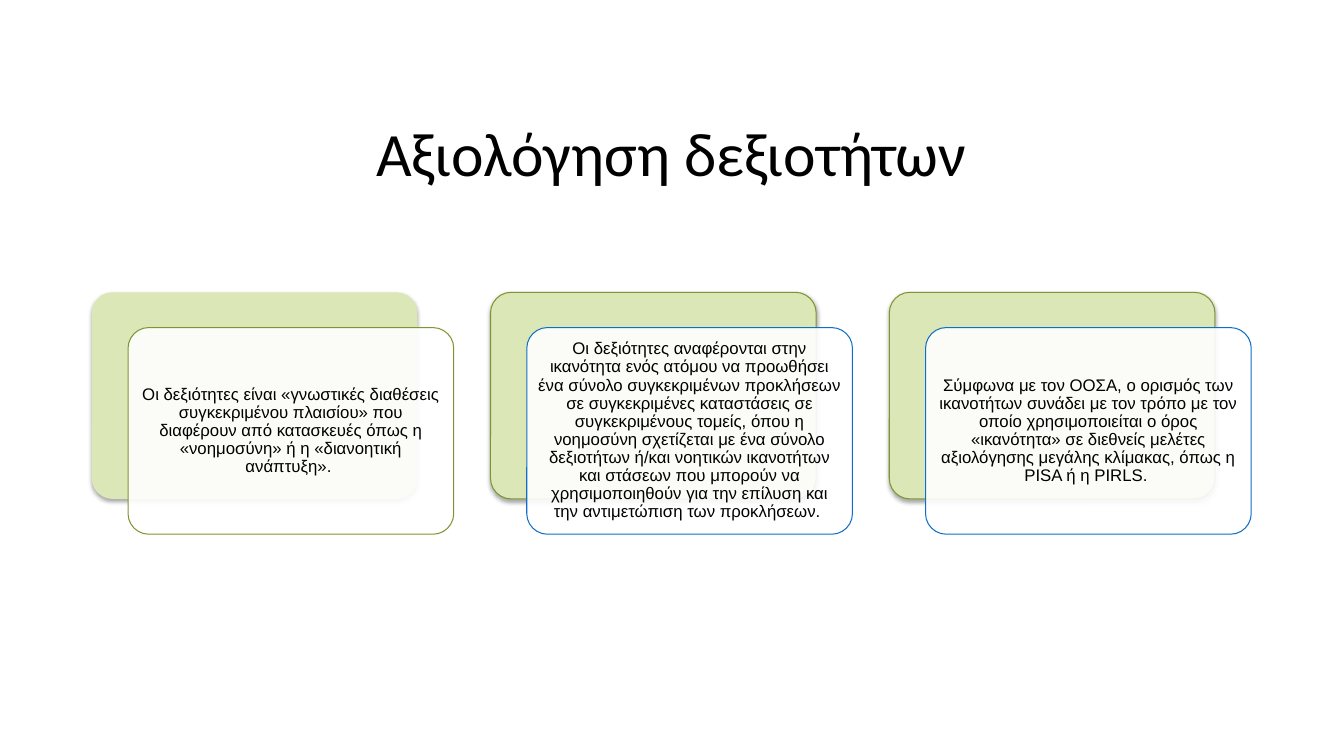
from dataclasses import dataclass

from lxml import etree
from pptx import Presentation
from pptx.dml.color import RGBColor
from pptx.enum.shapes import MSO_SHAPE
from pptx.enum.text import MSO_ANCHOR, PP_ALIGN
from pptx.oxml.ns import qn
from pptx.util import Inches, Pt

ROUND = MSO_SHAPE.ROUNDED_RECTANGLE
MIDDLE = MSO_ANCHOR.MIDDLE
CENTER = PP_ALIGN.CENTER

WIDE, HIGH = Inches(13.33), Inches(7.5)

# Shares of the slide, in percent of its width or height
LEFT, TOP = 6.83, 38.67
CARD_W, CARD_H = 24.23, 27.33
PITCH = 29.67
SHIFT_X, SHIFT_Y = 2.7, 4.67
TITLE_BOX = (LEFT, 12.13, 86.27, 17.2)


@dataclass(frozen=True)
class Theme:
    ink: str = "000000"
    paper: str = "FFFFFF"
    pale: str = "DBE7B6"
    green: str = "7E9632"
    blue: str = "0F6FC6"
    head_font: str = "Calibri"
    body_font: str = "Arial"
    head_size: int = 44
    body_size: int = 12
    line: float = 0.75
    curve: float = 0.1
    opaque: int = 90


THEME = Theme()

TITLE = "Αξιολόγηση δεξιοτήτων"

# Text, line of the back panel, line of the front card
CARDS = [
    ("Οι δεξιότητες είναι «γνωστικές διαθέσεις συγκεκριμένου πλαισίου» που "
     "διαφέρουν από κατασκευές όπως η «νοημοσύνη» ή η «διανοητική ανάπτυξη». ",
     None, THEME.green),
    ("Οι δεξιότητες αναφέρονται στην ικανότητα ενός ατόμου να προωθήσει ένα "
     "σύνολο συγκεκριμένων προκλήσεων σε συγκεκριμένες καταστάσεις σε "
     "συγκεκριμένους τομείς, όπου η νοημοσύνη σχετίζεται με ένα σύνολο "
     "δεξιοτήτων ή/και νοητικών ικανοτήτων και στάσεων που μπορούν να "
     "χρησιμοποιηθούν για την επίλυση και την αντιμετώπιση των προκλήσεων. ",
     THEME.green, THEME.blue),
    ("Σύμφωνα με τον ΟΟΣΑ, ο ορισμός των ικανοτήτων συνάδει με τον τρόπο με "
     "τον οποίο χρησιμοποιείται ο όρος «ικανότητα» σε διεθνείς μελέτες "
     "αξιολόγησης μεγάλης κλίμακας, όπως η PISA ή η PIRLS. ",
     THEME.green, THEME.blue),
]


def place(x, y, w, h):
    """Turn percent shares of the slide into lengths."""
    return (round(WIDE * x / 100), round(HIGH * y / 100),
            round(WIDE * w / 100), round(HIGH * h / 100))


def write(shape, text, font, size, color=THEME.ink, pad_x=0.05, pad_y=0.05):
    frame = shape.text_frame
    frame.word_wrap = True
    frame.vertical_anchor = MIDDLE
    frame.margin_left = frame.margin_right = Inches(pad_x)
    frame.margin_top = frame.margin_bottom = Inches(pad_y)
    para = frame.paragraphs[0]
    para.alignment = CENTER
    para.line_spacing = 0.9
    run = para.add_run()
    run.text = text
    run.font.name = font
    run.font.size = Pt(size)
    run.font.color.rgb = RGBColor.from_string(color)


def panel(slide, x, y, fill, line):
    shape = slide.shapes.add_shape(ROUND, *place(x, y, CARD_W, CARD_H))
    shape.adjustments[0] = THEME.curve
    shape.shadow.inherit = False
    shape.fill.solid()
    shape.fill.fore_color.rgb = RGBColor.from_string(fill)
    if line:
        shape.line.color.rgb = RGBColor.from_string(line)
        shape.line.width = Pt(THEME.line)
    else:
        shape.line.fill.background()
    return shape


def fade(shape, share):
    """Make the solid fill opaque by the given percent."""
    color = shape.fill._xPr.find(".//" + qn("a:srgbClr"))
    etree.SubElement(color, qn("a:alpha"), val=str(share * 1000))


def shade(shape):
    """Add a soft shadow straight below the shape."""
    effects = shape._element.spPr.find(qn("a:effectLst"))
    outer = etree.SubElement(effects, qn("a:outerShdw"), blurRad=str(Pt(3.1)),
                             dist=str(Pt(1.8)), dir="5400000", rotWithShape="0")
    color = etree.SubElement(outer, qn("a:srgbClr"), val=THEME.ink)
    etree.SubElement(color, qn("a:alpha"), val="35000")


def card(slide, x, text, back_line, front_line):
    back = panel(slide, x, TOP, THEME.pale, back_line)
    shade(back)
    front = panel(slide, x + SHIFT_X, TOP + SHIFT_Y, THEME.paper, front_line)
    fade(front, THEME.opaque)
    write(front, text, THEME.body_font, THEME.body_size)


def main():
    deck = Presentation()
    deck.slide_width, deck.slide_height = WIDE, HIGH
    slide = deck.slides.add_slide(deck.slide_layouts[6])
    title = slide.shapes.add_textbox(*place(*TITLE_BOX))
    write(title, TITLE, THEME.head_font, THEME.head_size, pad_x=0.1)
    for col, (text, back_line, front_line) in enumerate(CARDS):
        card(slide, LEFT + col * PITCH, text, back_line, front_line)
    deck.save("out.pptx")


if __name__ == "__main__":
    main()
